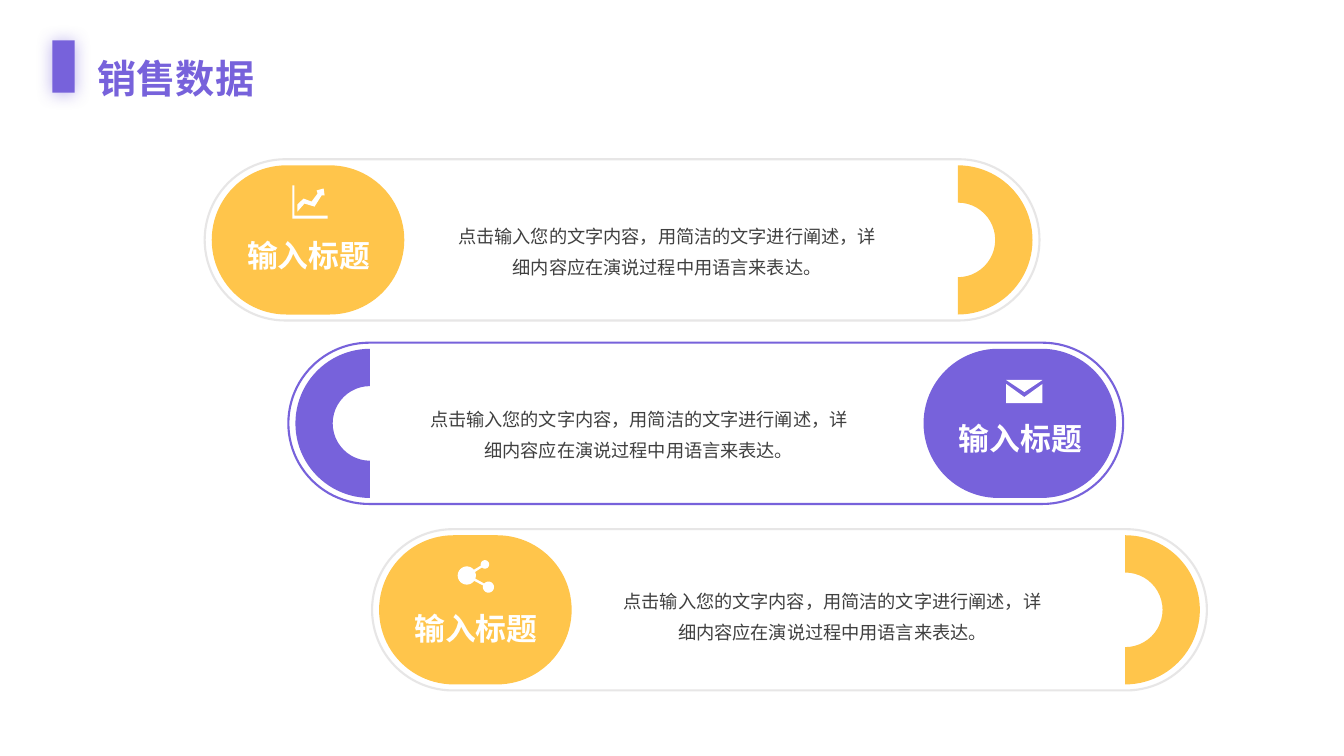
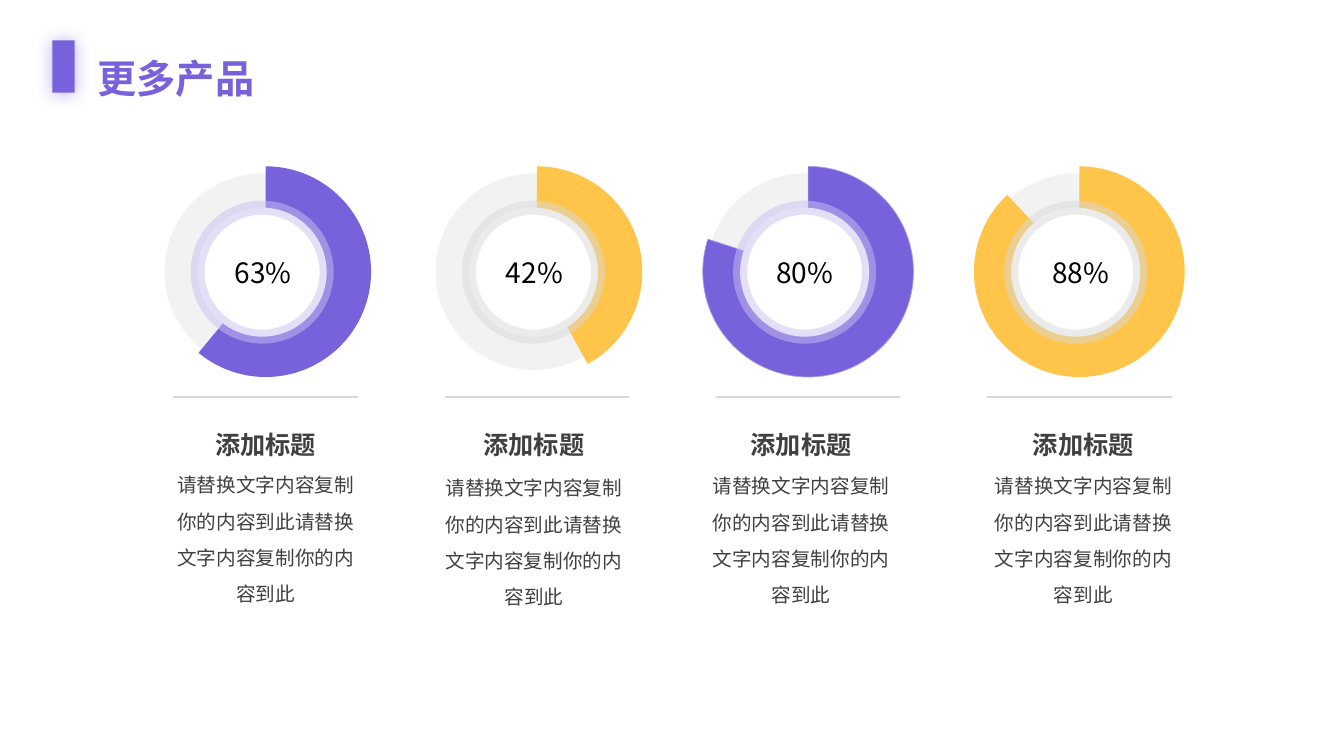
from math import cos, radians, sin

from lxml import etree
from pptx import Presentation, util as u
from pptx.dml.color import RGBColor
from pptx.enum import shapes as kinds, text as t
from pptx.oxml.ns import qn

Inches, Pt = u.Inches, u.Pt
SHAPE, ALIGN = kinds.MSO_SHAPE, t.PP_ALIGN


class Theme:
    font = "Noto Sans CJK SC"
    purple, yellow, white = "7762DB", "FFC54B", "FFFFFF"
    text, black = "404040", "000000"
    outline, disc, rule = "E7E6E6", "F2F2F2", "D8D8D8"
    purple_ring, yellow_ring, purple_edge = "C9C0F1", "D9D9D9", "ADA1E9"
    # size, colour, bold, alignment, line spacing, inset
    title = (28, purple, True, ALIGN.JUSTIFY, 1.5, None)
    badge = (22, white, True, ALIGN.CENTER, None, 0)
    card = (13, text, False, ALIGN.CENTER, Pt(22), 0)
    caption = (18, text, True, ALIGN.CENTER, 1.2, None)
    body = (14, text, False, ALIGN.CENTER, 1.54, None)
    percent = (20, black, False, ALIGN.LEFT, None, None)


def arc(x, y, radius, start, end):
    angles = [radians(start + (end - start) * i / 32) for i in range(33)]
    return [(x + radius * cos(a), y + radius * sin(a)) for a in angles]


# Content: icon outlines in hundredths of an inch
TREND = [
    [(0, 0), (2, 0), (2, 30), (35, 30), (35, 33), (0, 33)],
    [(31, 3), (32, 10), (29, 10), (22, 21), (12, 18), (5, 26), (5, 19),
     (11, 13), (19, 16), (25, 8), (24, 5)],
]
ENVELOPE = [
    [(0, 0), (36, 0), (18, 12)],
    [(0, 4), (18, 17), (36, 4), (36, 23), (0, 23)],
]
SHARE = [
    arc(9, 15, 9, 36, 321) + arc(27, 4, 4.2, 164, 494)
    + arc(9, 15, 9, -23, 20) + arc(30.5, 26.5, 5.5, 220, 556),
]

CARD_TEXT = "点击输入您的文字内容，用简洁的文字进行阐述，详细内容应在演说过程中用语言来表达。"
CARDS = [
    dict(top=1.58, text_left=4.49, label_drop=0.71, badge_right=False,
         fill=Theme.yellow, line=Theme.outline, icon=TREND, icon_at=(2.9, 1.84)),
    dict(top=3.4, text_left=4.21, label_drop=0.7, badge_right=True,
         fill=Theme.purple, line=Theme.purple, icon=ENVELOPE, icon_at=(9.98, 3.77)),
    dict(top=5.25, text_left=6.13, label_drop=0.74, badge_right=False,
         fill=Theme.yellow, line=Theme.outline, icon=SHARE, icon_at=(4.54, 5.56)),
]

PRODUCT_TEXT = "请替换文字内容复制你的内容到此请替换文字内容复制你的内容到此"
# label, drawn share, fill, ring, edge, label left, caption left, body top
PRODUCTS = [
    ("63%", 0.61, Theme.purple, Theme.purple_ring, None, 2.23, 1.72, 4.52),
    ("42%", 0.42, Theme.yellow, Theme.yellow_ring, None, 4.92, 4.38, 4.55),
    ("80%", 0.8, Theme.purple, Theme.purple_ring, Theme.purple_edge, 7.6, 7.03, 4.53),
    ("88%", 0.88, Theme.yellow, Theme.yellow_ring, None, 10.34, 9.83, 4.53),
]


# Drawing helpers
def color(value):
    return RGBColor.from_string(value)


def paint(shape, fill=None, line=None, width=1):
    shape.shadow.inherit = False
    if fill:
        shape.fill.solid()
        shape.fill.fore_color.rgb = color(fill)
    else:
        shape.fill.background()
    if line:
        shape.line.color.rgb = color(line)
        shape.line.width = Pt(width)
    else:
        shape.line.fill.background()
    return shape


def add_shape(slide, kind, box, fill=None, line=None, width=1, adjust=()):
    shape = slide.shapes.add_shape(kind, *map(Inches, box))
    for index, value in enumerate(adjust):
        shape.adjustments[index] = value
    return paint(shape, fill, line, width)


def add_text(slide, content, box, style):
    size, ink, bold, alignment, spacing, inset = style
    frame = slide.shapes.add_textbox(*map(Inches, box)).text_frame
    frame.word_wrap = True
    frame.auto_size = t.MSO_AUTO_SIZE.SHAPE_TO_FIT_TEXT
    if inset is not None:
        for side in ("left", "top", "right", "bottom"):
            setattr(frame, f"margin_{side}", Inches(inset))
    paragraph = frame.paragraphs[0]
    paragraph.alignment = alignment
    paragraph.line_spacing = spacing
    run = paragraph.add_run()
    run.text = content
    for name, value in dict(name=Theme.font, size=Pt(size), bold=bold).items():
        setattr(run.font, name, value)
    run.font.color.rgb = color(ink)
    latin = run.font._element.find(qn("a:latin"))
    east_asian = etree.Element(qn("a:ea"), typeface=Theme.font)
    latin.addnext(east_asian)


def add_icon(slide, contours, origin):
    placed = [[(Inches(origin[0] + x / 100), Inches(origin[1] + y / 100))
               for x, y in contour] for contour in contours]
    builder = slide.shapes.build_freeform(*placed[0][0], scale=1.0)
    for index, contour in enumerate(placed):
        if index:
            builder.move_to(*contour[0])
        builder.add_line_segments(contour[1:], close=True)
    paint(builder.convert_to_shape(), Theme.white)


def set_alpha(parent, percent):
    rgb = next(parent.iter(qn("a:srgbClr")))
    etree.SubElement(rgb, qn("a:alpha"), val=str(percent * 1000))


def add_glow(shape):
    effects = shape._element.spPr.find(qn("a:effectLst"))
    shadow = etree.SubElement(
        effects, qn("a:outerShdw"), blurRad=str(Pt(12)), dist=str(Pt(1)),
        dir="5400000", algn="ctr", rotWithShape="0")
    etree.SubElement(shadow, qn("a:srgbClr"), val=Theme.purple)
    set_alpha(shadow, 50)


def new_slide(presentation, title):
    slide = presentation.slides.add_slide(presentation.slide_layouts[6])
    add_glow(add_shape(slide, SHAPE.RECTANGLE, (0.52, 0.4, 0.22, 0.52), Theme.purple))
    add_text(slide, title, (0.87, 0.26, 2.43, 0.73), Theme.title)
    return slide


# Sales slide: three staggered capsule cards
def build_sales(presentation):
    slide = new_slide(presentation, "销售数据")
    width, height, badge_width, inner = 8.28, 1.6, 1.91, 1.48
    pad = 0.07
    for index, card in enumerate(CARDS):
        left, top = 2.03 + 0.83 * index, card["top"]
        inner_top = top + (height - inner) / 2
        badge_left, arc_left, turn = left + pad, left + width - pad - inner, 90
        if card["badge_right"]:
            badge_left, arc_left, turn = left + width - pad - badge_width, left + pad, 270
        add_shape(slide, SHAPE.ROUNDED_RECTANGLE, (left, top, width, height),
                  line=card["line"], width=1.5, adjust=[0.5])
        add_shape(slide, SHAPE.ROUNDED_RECTANGLE,
                  (badge_left, inner_top, badge_width, inner), card["fill"], adjust=[0.5])
        half_ring = add_shape(slide, SHAPE.BLOCK_ARC,
                              (arc_left, inner_top, inner, inner), card["fill"])
        half_ring.rotation = turn
        add_icon(slide, card["icon"], card["icon_at"])
        add_text(slide, CARD_TEXT, (card["text_left"], 2.15 + 1.81 * index, 4.25, 0.58),
                 Theme.card)
        add_text(slide, "输入标题",
                 (badge_left + 0.29, inner_top + card["label_drop"], 1.34, 0.37), Theme.badge)


# Products slide: four progress rings with captions
def build_products(presentation):
    slide = new_slide(presentation, "更多产品")
    for index, product in enumerate(PRODUCTS):
        label, share, fill, ring, edge, label_left, caption_left, body_top = product
        left = 1.63 + 2.69 * index
        add_shape(slide, SHAPE.OVAL, (left, 1.72, 1.95, 1.95), Theme.disc)
        # Pie angles run clockwise from the top, in units of 5/3 degree
        end = (share * 360 - 90) * 0.6
        add_shape(slide, SHAPE.PIE, (left - 0.04, 1.65, 2.09, 2.09), fill, edge, 0.5,
                  adjust=[162, end])
        hub = add_shape(slide, SHAPE.OVAL, (left + 0.33, 2.06, 1.28, 1.28),
                        Theme.white, ring, 10)
        set_alpha(hub.line._get_or_add_ln(), 50)
        rule = slide.shapes.add_connector(
            kinds.MSO_CONNECTOR.STRAIGHT, Inches(left + 0.09), Inches(3.94),
            Inches(left + 1.92), Inches(3.94))
        rule.line.color.rgb = color(Theme.rule)
        rule.line.width = Pt(1)
        etree.SubElement(rule._element.spPr, qn("a:effectLst"))
        add_text(slide, label, (label_left, 2.49, 0.83, 0.44), Theme.percent)
        add_text(slide, "添加标题", (caption_left, 4.15, 1.83, 0.45), Theme.caption)
        add_text(slide, PRODUCT_TEXT, (caption_left - 0.13, body_top, 2.09, 1.55), Theme.body)


def main():
    presentation = Presentation()
    presentation.slide_width = Inches(13.33)
    presentation.slide_height = Inches(7.5)
    build_sales(presentation)
    build_products(presentation)
    presentation.save("out.pptx")


if __name__ == "__main__":
    main()
